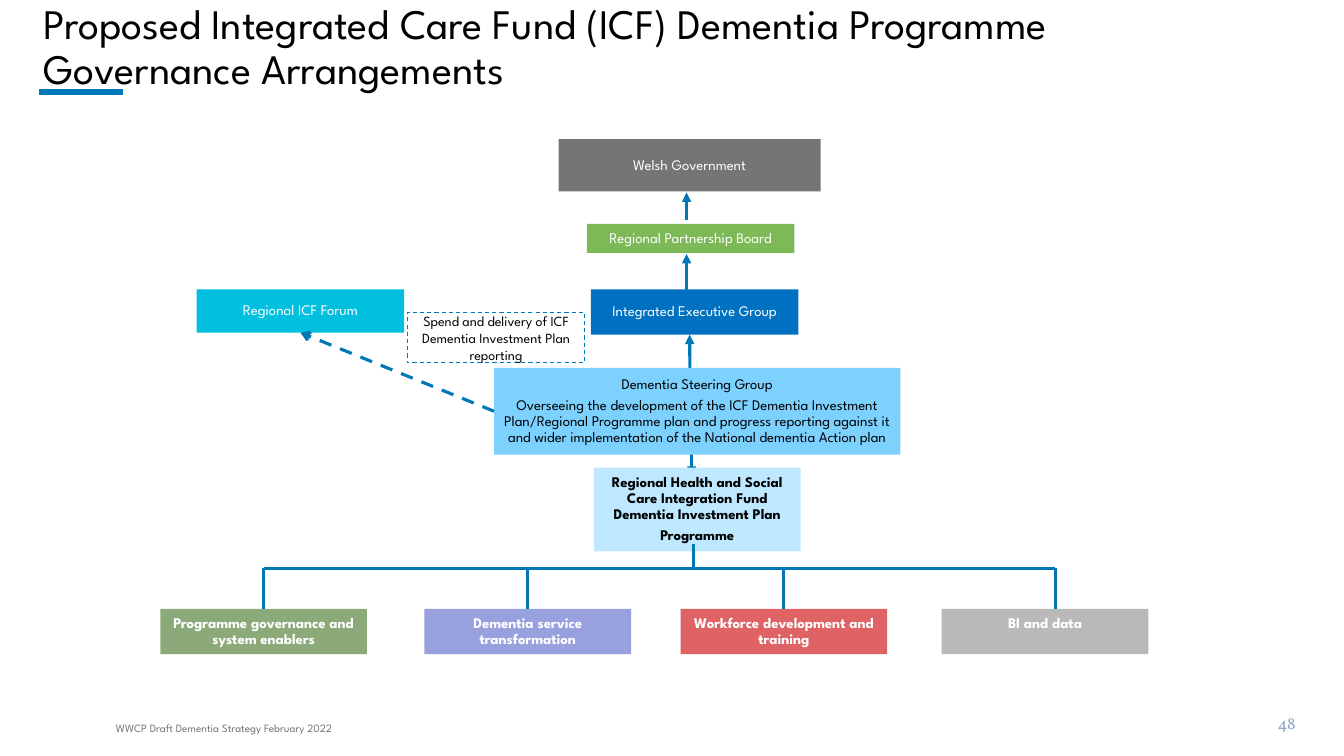
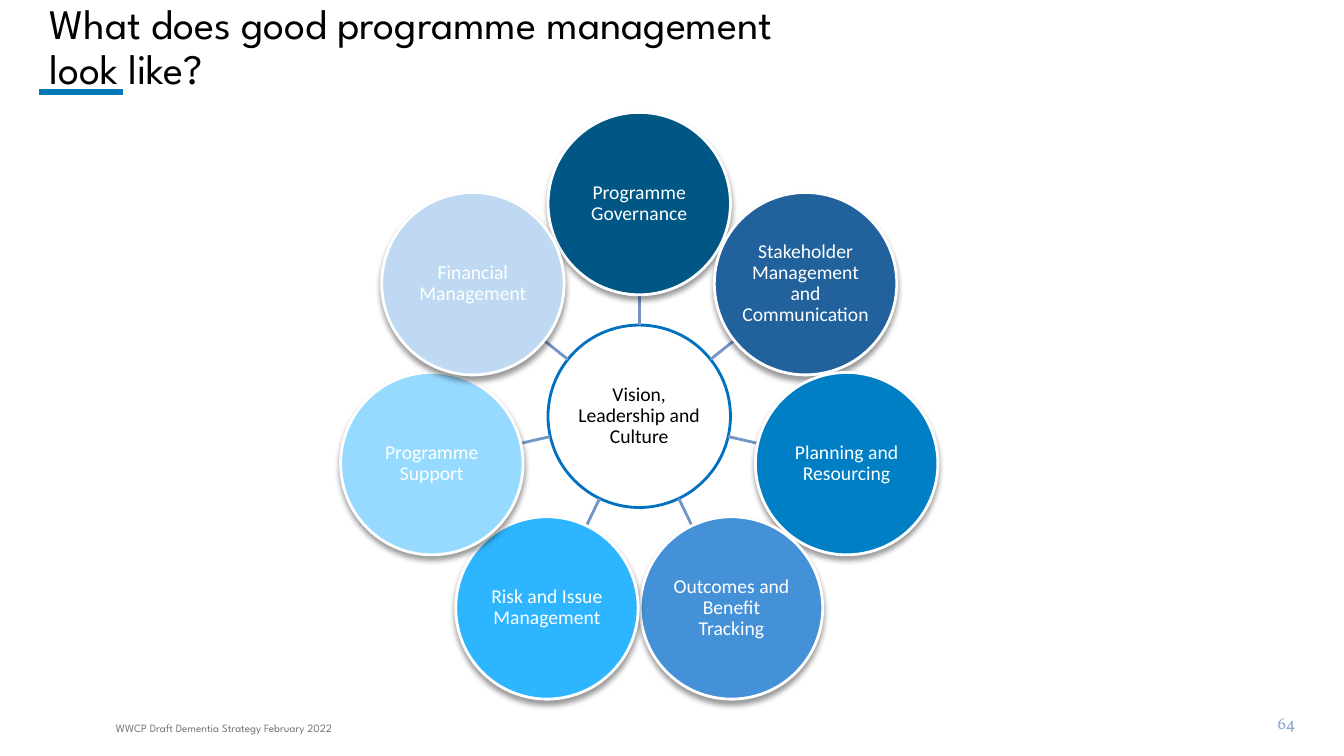
from math import cos, pi, sin

from lxml import etree
from pptx import Presentation
from pptx.dml.color import RGBColor
from pptx.enum.dml import MSO_LINE
from pptx.enum.shapes import MSO_CONNECTOR, MSO_SHAPE
from pptx.enum.text import MSO_ANCHOR, MSO_AUTO_SIZE, PP_ALIGN
from pptx.oxml.ns import qn
from pptx.util import Inches, Pt

STRAIGHT = MSO_CONNECTOR.STRAIGHT
RECTANGLE, OVAL = MSO_SHAPE.RECTANGLE, MSO_SHAPE.OVAL
DASH = MSO_LINE.DASH
TOP, MIDDLE, BOTTOM = MSO_ANCHOR.TOP, MSO_ANCHOR.MIDDLE, MSO_ANCHOR.BOTTOM
LEFT, CENTER, RIGHT = PP_ALIGN.LEFT, PP_ALIGN.CENTER, PP_ALIGN.RIGHT
SIDE_TOP, SIDE_LEFT, SIDE_BOTTOM = 0, 1, 2

COLORS = {
    "black": "000000", "white": "FFFFFF", "grey": "757574", "accent": "0077B7",
    "number": "8CA7CC", "cyan": "00BFDF", "sky": "7CD1FF", "green": "7DB956",
    "blue": "0070C0", "pale": "BEE8FF", "sage": "8CA979", "lilac": "99A0DE",
    "red": "DF6265", "silver": "B9B9B9", "spoke": "7394C5", "navy": "005685",
    "steel": "21619C", "azure": "007FC4", "cornflower": "4591D7",
    "bright": "2EB5FF", "light": "96DAFF", "mist": "BED9F1",
}
HEADING_FONT, DIAGRAM_FONT, NUMBER_FONT = "League Spartan", "Calibri", "Vollkorn"
SLIDE_WIDTH, SLIDE_HEIGHT = 13.33, 7.5
FOOTER = "WWCP Draft Dementia Strategy February 2022"

GOVERNANCE_TITLE = "Proposed Integrated Care Fund (ICF) Dementia Programme\vGovernance Arrangements"
GOVERNANCE_BOXES = {
    "government": (["Welsh Government"], (5.54, 1.38, 2.6, 0.52), "grey", "white", 0.01, False),
    "forum": (["Regional ICF Forum"], (1.95, 2.87, 2.06, 0.43), "cyan", "white", 0.01, False),
    "steering": ([
        "Dementia Steering Group",
        "Overseeing the development of the ICF Dementia Investment Plan/Regional Programme plan "
        "and progress reporting against it and wider implementation of the National dementia Action plan",
    ], (4.9, 3.65, 4.03, 0.86), "sky", "black", 0.01, False),
    "board": (["Regional Partnership Board"], (5.82, 2.22, 2.06, 0.29), "green", "white", 0.07, False),
    "executive": (["Integrated Executive Group"], (5.86, 2.87, 2.06, 0.45), "blue", "white", 0.07, False),
    "programme": ([
        "Regional Health and Social Care Integration Fund Dementia Investment Plan",
        "Programme",
    ], (5.89, 4.64, 2.05, 0.83), "pale", "black", 0.07, True),
}
REPORTING_NOTE = "Spend and delivery of ICF Dementia Investment Plan reporting"
ARROWS_BEHIND = [((6.85, 4.47), (6.84, 3.32)), ((6.86, 3.65), (6.86, 4.72))]
ARROWS_IN_FRONT = [((6.81, 2.88), (6.81, 2.52)), ((6.81, 2.18), (6.81, 1.91))]
WORKSTREAMS = [
    ("Programme governance and system enablers", 1.59, "sage", MIDDLE, 0),
    ("Dementia service transformation", 4.21, "lilac", MIDDLE, 0),
    ("Workforce development and training", 6.75, "red", MIDDLE, 0),
    ("BI and data", 9.34, "silver", TOP, 0.1),
]
WORKSTREAM_TOP, WORKSTREAM_WIDTH, WORKSTREAM_HEIGHT = 6.04, 2.05, 0.45
TRUNK_X, TRUNK_TOP, RAIL_Y = 6.88, 5.4, 5.64

MANAGEMENT_TITLE = "What does good programme management\vlook like?"
HUB = "Vision, Leadership and Culture"
PETALS = [
    ("Programme Governance", "navy"),
    ("Stakeholder Management and Communication", "steel"),
    ("Planning and Resourcing", "azure"),
    ("Outcomes and Benefit Tracking", "cornflower"),
    ("Risk and Issue Management", "bright"),
    ("Programme Support", "light"),
    ("Financial Management", "mist"),
]
WHEEL_CENTER, WHEEL_RADIUS, CIRCLE_SIZE = (6.34, 4.13), 2.11, 1.81


def color(name):
    return RGBColor.from_string(COLORS[name])


def write(shape, texts, size, font_color, font=HEADING_FONT, bold=False,
          align=CENTER, anchor=MIDDLE, inset=0, spacing=0.9):
    frame = shape.text_frame
    frame.word_wrap = True
    frame.auto_size = MSO_AUTO_SIZE.NONE
    frame.vertical_anchor = anchor
    frame.margin_left = frame.margin_right = Inches(inset)
    frame.margin_top = frame.margin_bottom = Inches(inset)
    for index, text in enumerate(texts):
        paragraph = frame.add_paragraph() if index else frame.paragraphs[0]
        paragraph.text = text
        paragraph.alignment = align
        paragraph.line_spacing = spacing
        if index < len(texts) - 1:
            paragraph.space_after = Pt(round(size * 0.35, 1))
        for run in paragraph.runs:
            run.font.name = font
            run.font.size = Pt(size)
            run.font.bold = bold
            run.font.color.rgb = color(font_color)


def add_text(slide, area, text, size, font_color, **style):
    box = slide.shapes.add_textbox(*map(Inches, area))
    write(box, [text], size, font_color, **style)
    return box


def add_box(slide, kind, area, fill=None, line=None, line_width=2):
    shape = slide.shapes.add_shape(kind, *map(Inches, area))
    shape.shadow.inherit = False
    if fill:
        shape.fill.solid()
        shape.fill.fore_color.rgb = color(fill)
    else:
        shape.fill.background()
    if line:
        shape.line.color.rgb = color(line)
        shape.line.width = Pt(line_width)
    else:
        shape.line.fill.background()
    return shape


def add_line(slide, start, end, line="accent", width=2.25, arrow=None, dash=None):
    connector = slide.shapes.add_connector(STRAIGHT, *map(Inches, (*start, *end)))
    connector.line.color.rgb = color(line)
    connector.line.width = Pt(width)
    if dash:
        connector.line.dash_style = dash
    properties = connector.element.spPr
    if arrow:
        etree.SubElement(properties.find(qn("a:ln")), qn("a:tailEnd"), type=arrow)
    etree.SubElement(properties, qn("a:effectLst"))
    return connector


def add_soft_shadow(shape):
    effects = shape.element.spPr.find(qn("a:effectLst"))
    shadow = etree.SubElement(effects, qn("a:outerShdw"), blurRad=str(Pt(4)),
                              dist=str(Pt(3)), dir="5400000", rotWithShape="0")
    tint = etree.SubElement(shadow, qn("a:srgbClr"), val=COLORS["black"])
    etree.SubElement(tint, qn("a:alpha"), val="40000")


def decorate_layout(layout, slide):
    footer = add_text(slide, (1.15, 7.16, 2.51, 0.21), FOOTER, 8, "grey",
                      align=LEFT, anchor=TOP, spacing=1)
    title_bar = add_line(slide, (0.39, 0.91), (1.22, 0.91), width=4.5)
    for shape in (footer, title_bar):
        layout.shapes.element.append(shape.element)


def add_titled_slide(presentation, layout, text, left, number):
    slide = presentation.slides.add_slide(layout)
    title = slide.shapes.title
    title.left, title.top, title.width, title.height = map(Inches, (left, 0.5, 11, 0.43))
    write(title, [text], 30, "black", align=LEFT, anchor=BOTTOM)
    add_text(slide, (9.95, 6.97, 3, 0.4), number, 12, "number", font=NUMBER_FONT,
             align=RIGHT, inset=0.1, spacing=1)
    return slide


def draw_governance(slide):
    for start, end in ARROWS_BEHIND:
        add_line(slide, start, end, arrow="triangle")

    boxes = {}
    for name, (texts, area, fill, font_color, inset, bold) in GOVERNANCE_BOXES.items():
        boxes[name] = add_box(slide, RECTANGLE, area, fill)
        write(boxes[name], texts, 10.5, font_color, bold=bold, inset=inset)

    reporting = add_line(slide, (4.9, 4.08), (2.98, 3.3), arrow="arrow", dash=DASH)
    reporting.begin_connect(boxes["steering"], SIDE_LEFT)
    reporting.end_connect(boxes["forum"], SIDE_BOTTOM)
    note = add_box(slide, RECTANGLE, (4.04, 3.1, 1.76, 0.5), "white", "accent", 0.75)
    note.line.dash_style = DASH
    write(note, [REPORTING_NOTE], 10, "black", anchor=TOP, spacing=1)

    for start, end in ARROWS_IN_FRONT:
        add_line(slide, start, end, arrow="triangle")

    drops = []
    for text, left, fill, anchor, offset in WORKSTREAMS:
        area = (left, WORKSTREAM_TOP, WORKSTREAM_WIDTH, WORKSTREAM_HEIGHT)
        box = add_box(slide, RECTANGLE, area, fill)
        write(box, [text], 10.5, "white", bold=True, anchor=anchor, inset=0.07)
        drop_x = left + WORKSTREAM_WIDTH / 2 + offset
        drop = add_line(slide, (drop_x, RAIL_Y), (drop_x, WORKSTREAM_TOP))
        if not offset:
            drop.end_connect(box, SIDE_TOP)
        drops.append(drop_x)
    add_line(slide, (TRUNK_X, TRUNK_TOP), (TRUNK_X, RAIL_Y))
    add_line(slide, (drops[0], RAIL_Y), (drops[-1], RAIL_Y))


def wheel_point(angle, radius):
    return WHEEL_CENTER[0] + radius * sin(angle), WHEEL_CENTER[1] - radius * cos(angle)


def add_circle(slide, center, text, font_color, fill, line):
    area = (center[0] - CIRCLE_SIZE / 2, center[1] - CIRCLE_SIZE / 2, CIRCLE_SIZE, CIRCLE_SIZE)
    circle = add_box(slide, OVAL, area, fill, line)
    write(circle, [text], 14, font_color, font=DIAGRAM_FONT, inset=0.01)
    return circle


def draw_wheel(slide):
    add_circle(slide, WHEEL_CENTER, HUB, "black", None, "blue")
    for index, (text, fill) in enumerate(PETALS):
        angle = 2 * pi * index / len(PETALS)
        add_line(slide, wheel_point(angle, CIRCLE_SIZE / 2),
                 wheel_point(angle, WHEEL_RADIUS - CIRCLE_SIZE / 2), "spoke", 2)
        petal = add_circle(slide, wheel_point(angle, WHEEL_RADIUS), text, "white", fill, "white")
        add_soft_shadow(petal)


def main():
    presentation = Presentation()
    presentation.slide_width = Inches(SLIDE_WIDTH)
    presentation.slide_height = Inches(SLIDE_HEIGHT)
    layout = presentation.slide_layouts[5]
    governance = add_titled_slide(presentation, layout, GOVERNANCE_TITLE, 0.43, "48")
    decorate_layout(layout, governance)
    draw_governance(governance)
    management = add_titled_slide(presentation, layout, MANAGEMENT_TITLE, 0.49, "64")
    draw_wheel(management)
    presentation.save("out.pptx")


if __name__ == "__main__":
    main()
